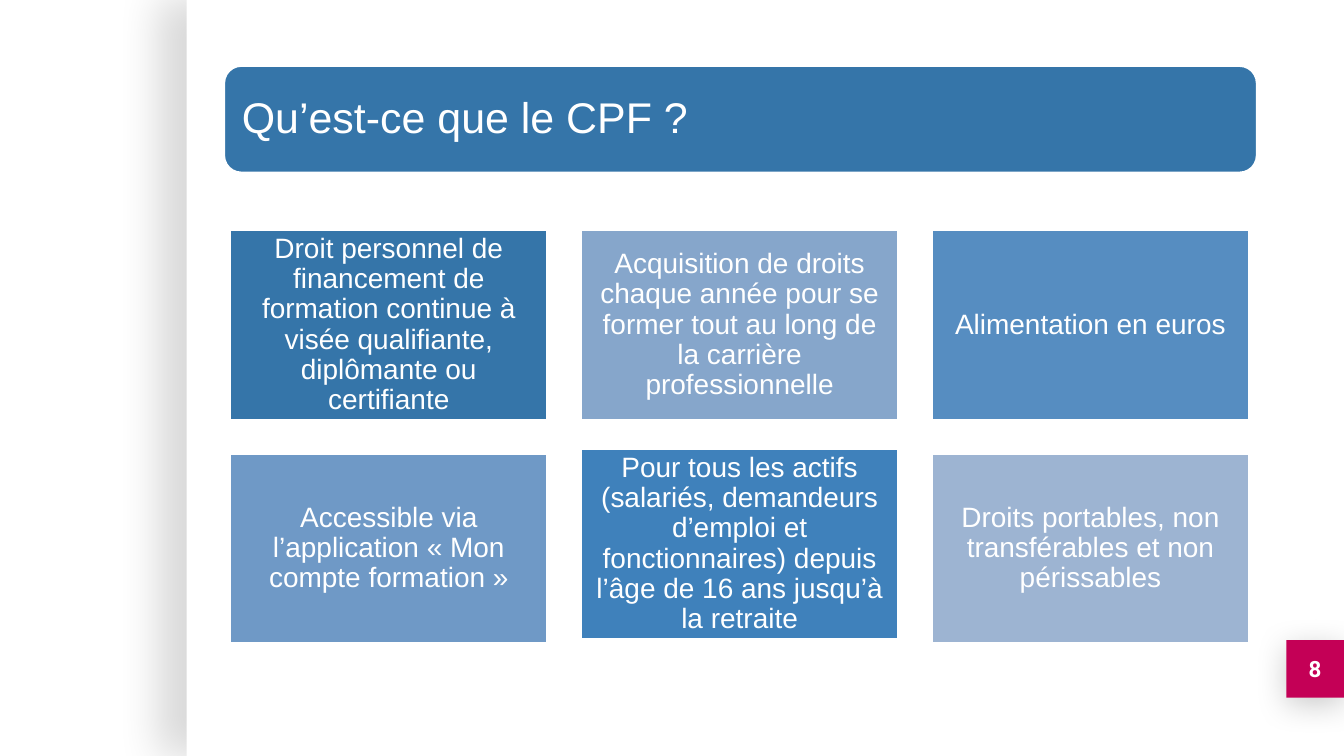
from lxml import etree
from pptx import Presentation
from pptx.dml.color import RGBColor
from pptx.enum.shapes import MSO_SHAPE
from pptx.enum.text import MSO_ANCHOR, PP_ALIGN
from pptx.oxml.ns import qn
from pptx.util import Cm, Pt

RECT, ROUNDED = MSO_SHAPE.RECTANGLE, MSO_SHAPE.ROUNDED_RECTANGLE
MIDDLE = MSO_ANCHOR.MIDDLE
LEFT, CENTER = PP_ALIGN.LEFT, PP_ALIGN.CENTER

COLORS = {
    "white": "FFFFFF",
    "black": "000000",
    "magenta": "C40056",
    "title": "3575A9",
}

# Cards, row by row: text and fill
CARDS = [
    [
        ("Droit personnel de financement de formation continue à visée "
         "qualifiante, diplômante ou certifiante", "3575A9"),
        ("Acquisition de droits chaque année pour se former tout au long "
         "de la carrière professionnelle", "86A6CB"),
        ("Alimentation en euros", "568DC1"),
    ],
    [
        ("Accessible via l’application « Mon compte formation »", "6F99C6"),
        ("Pour tous les actifs (salariés, demandeurs d’emploi et "
         "fonctionnaires) depuis l’âge de 16 ans jusqu’à la retraite", "3F81BB"),
        ("Droits portables, non transférables et non périssables", "9DB4D2"),
    ],
]
CARD_LEFT, CARD_TOP = 4.34, 4.34
CARD_W, CARD_H = 6.02, 3.61
COL_STEP, ROW_STEP = 6.63, 4.22
RAISED_CARD, RAISE = (1, 1), 0.08


def add_box(s, kind, x, y, w, h, fill, outlined=False):
    sp = s.shapes.add_shape(kind, Cm(x), Cm(y), Cm(w), Cm(h))
    sp.shadow.inherit = False
    sp.fill.solid()
    sp.fill.fore_color.rgb = RGBColor.from_string(fill)
    if outlined:
        sp.line.color.rgb = RGBColor.from_string(COLORS["white"])
        sp.line.width = Pt(2)
    else:
        sp.line.fill.background()
    return sp


def set_text(sp, text, size, align=CENTER, inset=0.15, font="Arial",
             bold=False, spacing=0.9):
    tf = sp.text_frame
    tf.word_wrap = True
    tf.vertical_anchor = MIDDLE
    tf.margin_left = tf.margin_right = Cm(inset)
    tf.margin_top = tf.margin_bottom = Cm(inset)
    p = tf.paragraphs[0]
    p.text = text
    p.alignment = align
    p.line_spacing = spacing
    p.font.name = font
    p.font.size = Pt(size)
    p.font.bold = bold
    p.font.color.rgb = RGBColor.from_string(COLORS["white"])


def add_shadow(sp, opacity, blur, distance, angle):
    effects = sp._element.spPr.find(qn("a:effectLst"))
    shadow = etree.SubElement(
        effects, qn("a:outerShdw"), blurRad=str(Pt(blur)),
        dist=str(Pt(distance)), dir=str(angle * 60000), rotWithShape="0")
    color = etree.SubElement(shadow, qn("a:srgbClr"), val=COLORS["black"])
    etree.SubElement(color, qn("a:alpha"), val=str(opacity * 1000))


def add_cards(s):
    for row, cards in enumerate(CARDS):
        for col, (text, fill) in enumerate(cards):
            y = CARD_TOP + row * ROW_STEP
            if (row, col) == RAISED_CARD:
                y -= RAISE
            sp = add_box(s, RECT, CARD_LEFT + col * COL_STEP, y,
                         CARD_W, CARD_H, fill, outlined=True)
            set_text(sp, text, 15)


def main():
    prs = Presentation()
    prs.slide_width, prs.slide_height = Cm(25.4), Cm(14.29)
    s = prs.slides.add_slide(prs.slide_layouts[6])

    # White page with its shadow on the left
    page = add_box(s, RECT, 3.53, 0, 21.87, 14.29, COLORS["white"])
    add_shadow(page, 15, 22.5, 15, 180)

    # Slide number
    number = add_box(s, RECT, 24.31, 12.1, 1.09, 1.09, COLORS["magenta"])
    add_shadow(number, 20, 16.9, 3.8, 90)
    set_text(number, "8", 12, inset=0.25, font="Roboto", bold=True, spacing=1)

    # Title
    title = add_box(s, ROUNDED, 4.22, 1.23, 19.55, 2.05, COLORS["title"],
                    outlined=True)
    set_text(title, "Qu’est-ce que le CPF ?", 23, align=LEFT, inset=0.25)

    # Card grid
    add_cards(s)

    prs.save("out.pptx")


if __name__ == "__main__":
    main()
